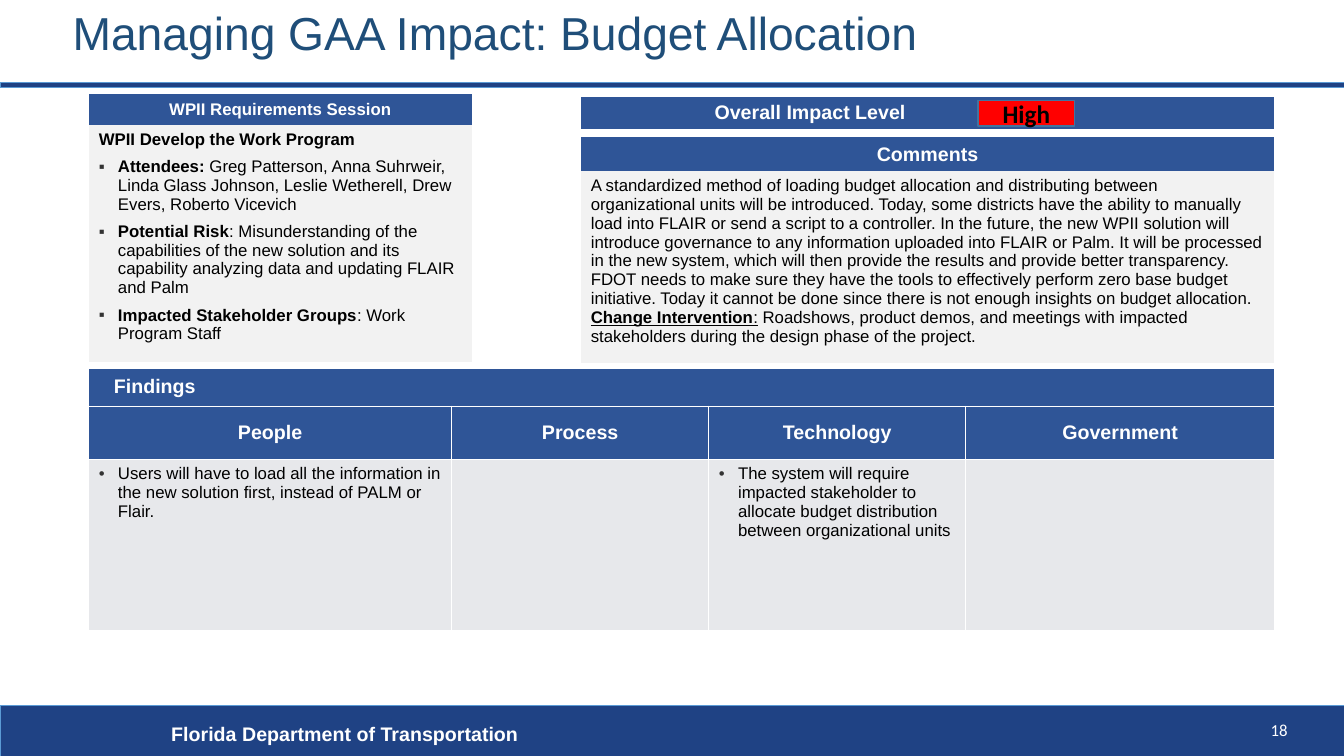
"""Build the budget allocation impact slide with its findings tables."""
from dataclasses import dataclass

from lxml import etree
from pptx import Presentation
from pptx.dml.color import RGBColor
from pptx.enum.shapes import MSO_SHAPE
from pptx.enum.text import MSO_ANCHOR, MSO_AUTO_SIZE, PP_ALIGN
from pptx.oxml.ns import qn
from pptx.util import Inches, Pt

LEFT, CENTER, RIGHT = PP_ALIGN.LEFT, PP_ALIGN.CENTER, PP_ALIGN.RIGHT
TOP, MIDDLE = MSO_ANCHOR.TOP, MSO_ANCHOR.MIDDLE
RECTANGLE = MSO_SHAPE.RECTANGLE
NO_AUTOFIT = MSO_AUTO_SIZE.NONE
TITLE_ONLY_LAYOUT = 5
PLAIN_TABLE_STYLE = "{2D5ABB26-0587-4C30-8999-92F81FD0307C}"
COLORS = {
    "navy": "1F4284", "header": "2F5597", "title": "1F4E79", "panel": "F2F2F2",
    "finding": "E7E8EB", "white": "FFFFFF", "black": "000000", "red": "FF0000",
    "bullet": "333333", "bar_line": "5B9BD5", "level_line": "43739E",
}


@dataclass(frozen=True)
class Words:
    text: str
    bold: bool = False
    underline: bool = False


@dataclass(frozen=True)
class Line:
    words: tuple[Words, ...]
    size: float = 12
    color: str = "black"
    align: PP_ALIGN = LEFT
    bullet: str = ""
    font: str = "Arial"
    space_after: float = 0


@dataclass(frozen=True)
class Cell:
    lines: tuple[Line, ...]
    fill: str
    anchor: MSO_ANCHOR = TOP
    vertical_margin: float = 0.05
    left_margin: float = 0.1


@dataclass(frozen=True)
class Grid:
    left: float
    top: float
    columns: tuple[float, ...]
    rows: tuple[float, ...]
    cells: tuple[tuple[Cell, ...], ...]
    bordered: bool = False


@dataclass(frozen=True)
class Box:
    left: float
    top: float
    width: float
    height: float
    line: Line | None = None
    fill: str = ""
    outline: str = ""
    outline_width: float = 0.5


def rgb(name: str) -> RGBColor:
    return RGBColor.from_string(COLORS[name])


def header(text: str, size: float = 14, align: PP_ALIGN = CENTER, left_margin: float = 0.1) -> Cell:
    line = Line((Words(text, True),), size, "white", align)
    return Cell((line,), "header", MIDDLE, 0, left_margin)


def labelled(label: str, text: str) -> Line:
    return Line((Words(label, True), Words(text)), bullet="▪", space_after=6)


def finding(text: str = "") -> Cell:
    lines = (Line((Words(text),), bullet="•"),) if text else ()
    return Cell(lines, "finding")


def add_bullet(paragraph, character: str) -> None:
    properties = paragraph._p.get_or_add_pPr()
    properties.set("marL", str(Inches(0.19)))
    properties.set("indent", str(-Inches(0.19)))
    color = etree.SubElement(properties, qn("a:buClr"))
    etree.SubElement(color, qn("a:srgbClr"), val=COLORS["bullet"])
    etree.SubElement(properties, qn("a:buFont"), typeface="Arial")
    etree.SubElement(properties, qn("a:buChar"), char=character)


def write_line(paragraph, line: Line) -> None:
    if line.bullet:
        add_bullet(paragraph, line.bullet)
    paragraph.alignment = line.align
    paragraph.space_after = Pt(line.space_after)
    for words in line.words:
        run = paragraph.add_run()
        run.text = words.text
        run.font.name = line.font
        run.font.size = Pt(line.size)
        run.font.bold = words.bold
        run.font.underline = words.underline
        run.font.color.rgb = rgb(line.color)


def add_borders(cell) -> None:
    properties = cell._tc.get_or_add_tcPr()
    for index, side in enumerate(("lnL", "lnR", "lnT", "lnB")):
        border = etree.Element(qn(f"a:{side}"), w=str(Pt(1)))
        fill = etree.SubElement(border, qn("a:solidFill"))
        etree.SubElement(fill, qn("a:srgbClr"), val=COLORS["white"])
        properties.insert(index, border)


def fill_cell(cell, content: Cell) -> None:
    cell.fill.solid()
    cell.fill.fore_color.rgb = rgb(content.fill)
    cell.vertical_anchor = content.anchor
    cell.margin_top = cell.margin_bottom = Inches(content.vertical_margin)
    cell.margin_left = Inches(content.left_margin)
    for index, line in enumerate(content.lines):
        frame = cell.text_frame
        write_line(frame.add_paragraph() if index else frame.paragraphs[0], line)


def draw_grid(slide, grid: Grid) -> None:
    table = slide.shapes.add_table(
        len(grid.rows), len(grid.columns), Inches(grid.left), Inches(grid.top),
        Inches(sum(grid.columns)), Inches(sum(grid.rows))).table
    table.first_row = table.horz_banding = False
    table._tbl.tblPr.find(qn("a:tableStyleId")).text = PLAIN_TABLE_STYLE
    for column, width in zip(table.columns, grid.columns):
        column.width = Inches(width)
    for row_index, (height, contents) in enumerate(zip(grid.rows, grid.cells)):
        table.rows[row_index].height = Inches(height)
        if len(contents) < len(grid.columns):
            table.cell(row_index, 0).merge(table.cell(row_index, len(grid.columns) - 1))
        for column_index, content in enumerate(contents):
            fill_cell(table.cell(row_index, column_index), content)
    if grid.bordered:
        for cell in table.iter_cells():
            add_borders(cell)


def draw_box(slide, box: Box) -> None:
    area = [Inches(value) for value in (box.left, box.top, box.width, box.height)]
    if box.fill:
        shape = slide.shapes.add_shape(RECTANGLE, *area)
        shape.shadow.inherit = False
        shape.fill.solid()
        shape.fill.fore_color.rgb = rgb(box.fill)
        shape.line.color.rgb = rgb(box.outline)
        shape.line.width = Pt(box.outline_width)
        shape.text_frame.vertical_anchor = MIDDLE
    else:
        shape = slide.shapes.add_textbox(*area)
    shape.text_frame.word_wrap = True
    if box.line:
        write_line(shape.text_frame.paragraphs[0], box.line)


def draw_title(slide, text: str) -> None:
    title = slide.shapes.title
    title.left, title.top, title.width, title.height = (
        Inches(value) for value in (0.62, -0.01, 10.38, 0.72))
    title.text_frame.auto_size = NO_AUTOFIT
    title.text_frame.vertical_anchor = MIDDLE
    paragraph = title.text_frame.paragraphs[0]
    paragraph.line_spacing = 0.9
    write_line(paragraph, Line((Words(text),), 33, "title"))


BOXES = (
    Box(0, 7, 13.33, 0.5, fill="navy", outline="bar_line"),
    Box(1.6, 7.11, 7.98, 0.34, Line((Words("Florida Department of Transportation", True),), 14, "white")),
    Box(0, 0.82, 13.33, 0.05, fill="navy", outline="bar_line"),
    Box(11.74, 7.09, 1.13, 0.3, Line((Words("18"),), 12, "white", RIGHT, font="Calibri")),
)
IMPACT_LEVEL = Box(9.7, 1, 0.96, 0.25, Line((Words("High", True),), 18, align=CENTER, font="Calibri"),
                   "red", "level_line", 1)
COMMENTS = Line((
    Words("A standardized method of loading budget allocation and distributing between organizational units will be introduced. Today, some districts have the ability to manually load into FLAIR or send a script to a controller. In the future, the new WPII solution will introduce governance to any information uploaded into FLAIR or Palm. It will be processed in the new system, which will then provide the results and provide better transparency. FDOT needs to make sure they have the tools to effectively perform zero base budget initiative. Today it cannot be done since there is not enough insights on budget allocation. "),
    Words("Change Intervention", True, True), Words(":", underline=True),
    Words(" Roadshows, product demos, and meetings with impacted stakeholders during the design phase of the project.")))
SESSION = (
    Line((Words("WPII Develop the Work Program", True),), space_after=6),
    labelled("Attendees: ", "Greg Patterson, Anna Suhrweir, Linda Glass Johnson, Leslie Wetherell, Drew Evers, Roberto Vicevich"),
    labelled("Potential Risk", ": Misunderstanding of the capabilities of the new solution and its capability analyzing data and updating FLAIR and Palm"),
    labelled("Impacted Stakeholder Groups", ": Work Program Staff"),
)
FINDINGS = (
    finding("Users will have to load all the information in the new solution first, instead of PALM or Flair."),
    finding(),
    finding("The system will require impacted stakeholder to allocate budget distribution between organizational units"),
    finding(),
)
GRIDS = (
    Grid(5.76, 1.36, (6.88,), (0.34, 1.89), ((header("Comments"),), (Cell((COMMENTS,), "panel"),))),
    Grid(0.88, 3.65, (3.6, 2.55, 2.55, 3.06), (0.38, 0.53, 1.7), (
        (header("Findings", align=LEFT, left_margin=0.25),),
        tuple(header(name) for name in ("People", "Process", "Technology", "Government")),
        FINDINGS), True),
    Grid(0.88, 0.93, (3.8,), (0.31, 2.21), ((header("WPII Requirements Session", 12),), (Cell(SESSION, "panel"),))),
    Grid(5.76, 0.96, (4.55, 2.33), (0.32,), ((header("Overall Impact Level"), Cell((), "header", MIDDLE, 0)),)),
)


def main() -> None:
    presentation = Presentation()
    presentation.slide_width, presentation.slide_height = Inches(13.33), Inches(7.5)
    slide = presentation.slides.add_slide(presentation.slide_layouts[TITLE_ONLY_LAYOUT])
    draw_title(slide, "Managing GAA Impact: Budget Allocation")
    for box in BOXES:
        draw_box(slide, box)
    for grid in GRIDS:
        draw_grid(slide, grid)
    draw_box(slide, IMPACT_LEVEL)
    presentation.save("out.pptx")


if __name__ == "__main__":
    main()
